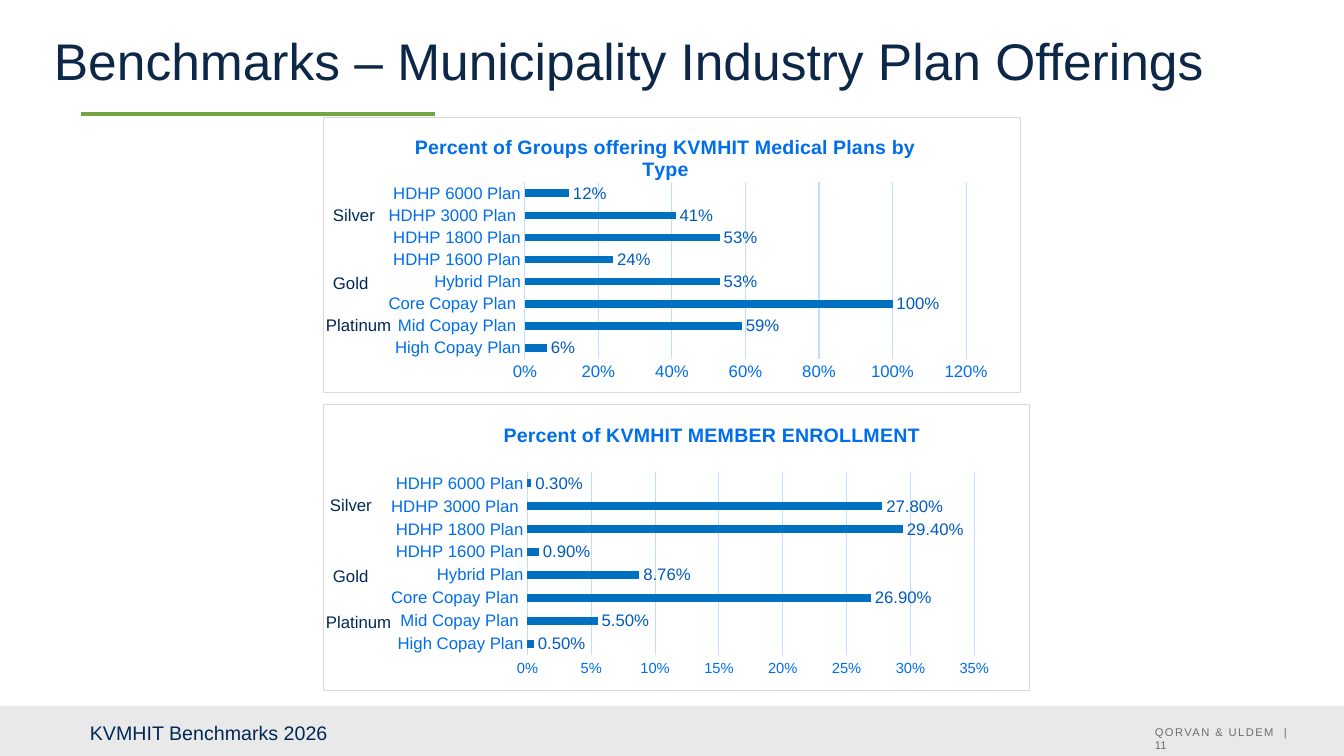
from dataclasses import dataclass

import lxml.etree
import pptx
import pptx.chart.data
import pptx.dml.color
import pptx.enum.chart
import pptx.enum.shapes
import pptx.enum.text
import pptx.oxml
import pptx.oxml.ns
import pptx.util

EMU_PER_INCH = 914400
PX_PER_INCH = 100.8
FONT = "Arial"
NAVY, BLUE, GRID = "002855", "006EEA", "BFDDFF"
PLANS = ["High Copay Plan", "Mid Copay Plan ", "Core Copay Plan ", "Hybrid Plan",
         "HDHP 1600 Plan", "HDHP 1800 Plan", "HDHP 3000 Plan ", "HDHP 6000 Plan"]
PLOT = (0.289, 0.236, 0.633, 0.642)


@dataclass
class PlanChart:
    title: str
    title_at: tuple[float, float]
    box: tuple[int, int, int, int]
    values: list[float]
    label_format: str
    axis_max: float
    axis_step: float
    axis_size: float


@dataclass
class Tier:
    name: str
    left: int
    top: int


CHARTS = [
    PlanChart("Percent of Groups offering KVMHIT Medical Plans by Type", (0.126, 0.05),
              (323, 117, 698, 276), [0.06, 0.59, 1, 0.53, 0.24, 0.53, 0.41, 0.12],
              "0%", 1.2, 0.2, 12),
    PlanChart("Percent of KVMHIT MEMBER ENROLLMENT", (0.25, 0.05),
              (323, 404, 707, 287),
              [0.005, 0.055, 0.269, 0.0876, 0.009, 0.294, 0.278, 0.003],
              "0.00%", 0.35, 0.05, 10.5),
]
TIERS = [Tier("Platinum", 316, 310), Tier("Platinum", 316, 607),
         Tier("Gold", 323, 268), Tier("Gold", 323, 561),
         Tier("Silver", 323, 200), Tier("Silver", 320, 490)]


def px(n: int) -> int:
    return round(n * EMU_PER_INCH / PX_PER_INCH)


def rgb(color: str) -> pptx.dml.color.RGBColor:
    return pptx.dml.color.RGBColor.from_string(color)


def set_font(font, size: float, color: str, bold: bool = False) -> None:
    font.name = FONT
    font.size = pptx.util.Pt(size)
    font.bold = bold
    font.color.rgb = rgb(color)


def set_line(line, color: str, width: float) -> None:
    line.color.rgb = rgb(color)
    line.width = pptx.util.Pt(width)


def add_text(s, text: str, left: int, top: int, width: int, height: int, *,
             size: float = 12, color: str = NAVY):
    tf = s.shapes.add_textbox(px(left), px(top), px(width), px(height)).text_frame
    tf.word_wrap = True
    p = tf.paragraphs[0]
    r = p.add_run()
    r.text = text
    set_font(r.font, size, color)
    return p


def manual_layout(x: float, y: float, w: float | None = None, h: float | None = None):
    layout = pptx.oxml.parse_xml(
        f'<c:layout {pptx.oxml.ns.nsdecls("c")}><c:manualLayout/></c:layout>')
    settings = [("xMode", "edge"), ("yMode", "edge"), ("x", x), ("y", y)]
    if w is not None:
        settings = [("layoutTarget", "inner"), *settings, ("w", w), ("h", h)]
    for tag, value in settings:
        lxml.etree.SubElement(layout[0], pptx.oxml.ns.qn(f"c:{tag}")).set("val", str(value))
    return layout


def replace_layout(parent, layout, index: int) -> None:
    for old in parent.findall(pptx.oxml.ns.qn("c:layout")):
        parent.remove(old)
    parent.insert(index, layout)


def add_plan_chart(s, spec: PlanChart) -> None:
    data = pptx.chart.data.CategoryChartData(number_format="0%")
    data.categories = PLANS
    data.add_series("Series 1", spec.values)
    chart = s.shapes.add_chart(pptx.enum.chart.XL_CHART_TYPE.BAR_CLUSTERED,
                               *map(px, spec.box), data).chart
    set_font(chart.font, 10, NAVY)
    chart.has_legend = False

    # Title and plot area
    chart.has_title = True
    p = chart.chart_title.text_frame.paragraphs[0]
    r = p.add_run()
    r.text = spec.title
    set_font(r.font, 14, BLUE, bold=True)
    chart.chart_title.include_in_layout = False
    replace_layout(chart._chartSpace.chart.find(pptx.oxml.ns.qn("c:title")),
                   manual_layout(*spec.title_at), 1)
    replace_layout(chart._chartSpace.chart.plotArea, manual_layout(*PLOT), 0)

    # Bars and value labels
    plot = chart.plots[0]
    plot.gap_width = 182
    plot.vary_by_categories = False
    fill = plot.series[0].format.fill
    fill.solid()
    fill.fore_color.rgb = rgb("0070C0")
    plot.has_data_labels = True
    labels = plot.data_labels
    labels.show_value = True
    labels.position = pptx.enum.chart.XL_LABEL_POSITION.OUTSIDE_END
    labels.number_format = spec.label_format
    labels.number_format_is_linked = False
    set_font(labels.font, 12, "005ABF")

    # Axes
    cat, val = chart.category_axis, chart.value_axis
    for axis, size in ((cat, 12), (val, spec.axis_size)):
        axis.major_tick_mark = pptx.enum.chart.XL_TICK_MARK.NONE
        axis.minor_tick_mark = pptx.enum.chart.XL_TICK_MARK.NONE
        set_font(axis.tick_labels.font, size, BLUE)
    set_line(cat.format.line, GRID, 0.75)
    val.format.line.fill.background()
    val.has_major_gridlines = True
    set_line(val.major_gridlines.format.line, GRID, 0.75)
    val.minimum_scale, val.maximum_scale = 0, spec.axis_max
    val.major_unit = spec.axis_step
    val.tick_labels.number_format = "0%"
    val.tick_labels.number_format_is_linked = False

    # Frame
    chart._chartSpace.chart.addnext(pptx.oxml.parse_xml(
        f'<c:spPr {pptx.oxml.ns.nsdecls("c", "a")}><a:noFill/><a:ln w="9525">'
        '<a:solidFill><a:srgbClr val="D9D9D9"/></a:solidFill></a:ln></c:spPr>'))


def main() -> None:
    prs = pptx.Presentation()
    prs.slide_width, prs.slide_height = px(1344), px(756)
    s = prs.slides.add_slide(prs.slide_layouts[6])

    # Footer band and title rule
    band = s.shapes.add_shape(pptx.enum.shapes.MSO_SHAPE.RECTANGLE,
                              0, px(706), px(1344), px(50))
    band.shadow.inherit = False
    band.fill.solid()
    band.fill.fore_color.rgb = rgb("E9E9EA")
    band.line.fill.background()
    rule = s.shapes.add_connector(pptx.enum.shapes.MSO_CONNECTOR.STRAIGHT,
                                  px(81), px(114), px(435), px(114))
    set_line(rule.line, "73A641", 3)
    lxml.etree.SubElement(rule._element.spPr, pptx.oxml.ns.qn("a:effectLst"))

    # Page mark
    p = add_text(s, "QORVAN & ULDEM  |  ", 1145, 720, 160, 46, size=8, color="6D6E71")
    p.runs[0]._r.get_or_add_rPr().set("spc", "100")
    r = p.add_run()
    r.text = "11"
    set_font(r.font, 8, "6D6E71")

    # Title, charts, tier labels and footer
    add_text(s, "Benchmarks – Municipality Industry Plan Offerings",
             44, 24, 1256, 73, size=36.8, color="0D2748")
    for spec in CHARTS:
        add_plan_chart(s, spec)
    for tier in TIERS:
        add_text(s, tier.name, tier.left, tier.top, 99, 30)
    add_text(s, "KVMHIT Benchmarks 2026", 80, 716, 936, 34, size=14)

    prs.save("out.pptx")


if __name__ == "__main__":
    main()
